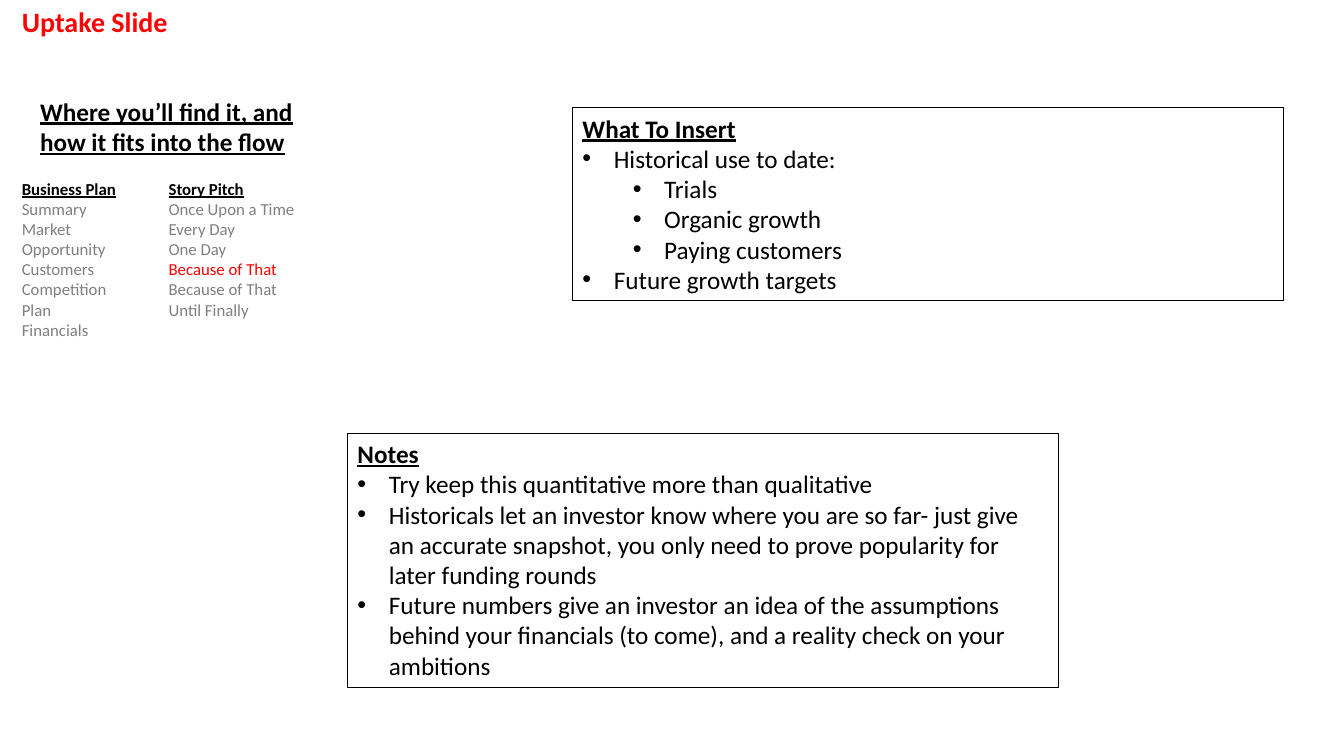
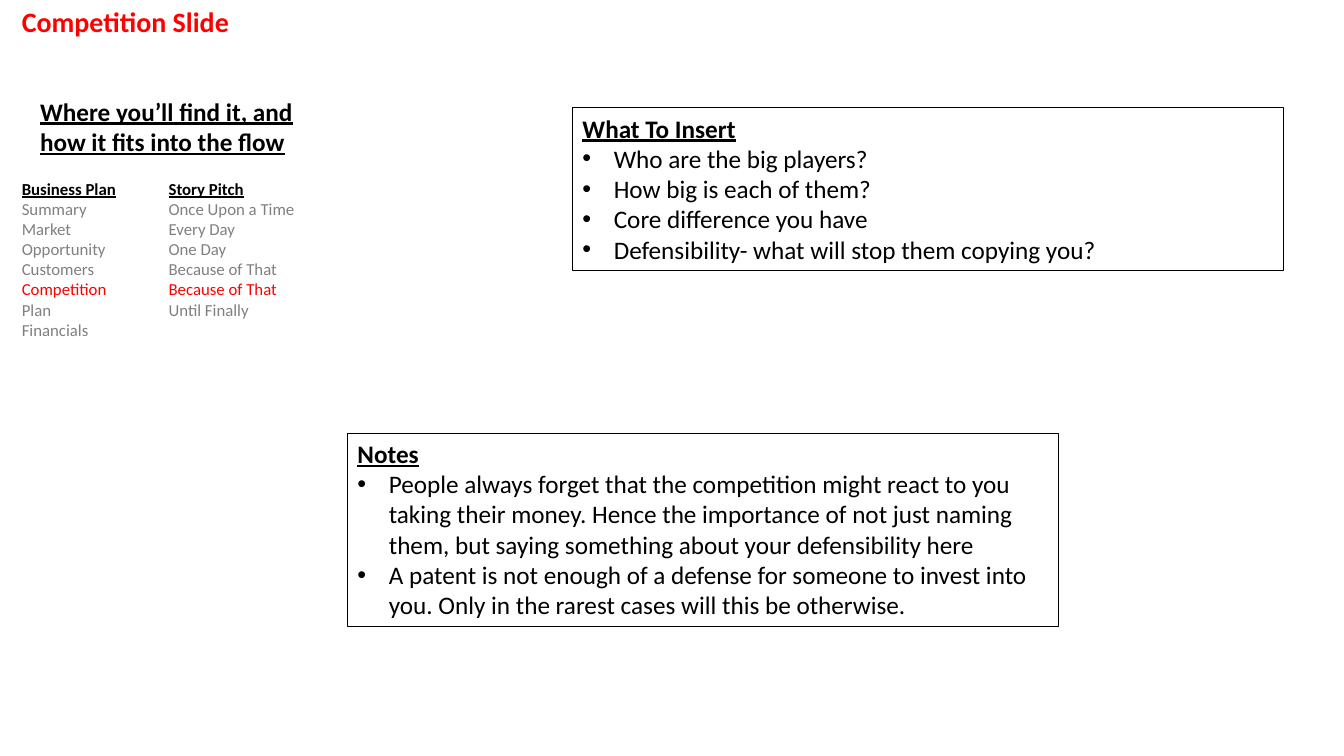
import pptx
import pptx.dml.color
import pptx.enum.shapes
import pptx.enum.text
import pptx.util
from lxml import etree
from pptx.oxml.ns import qn

Cm = pptx.util.Cm

# Shared style
FONT = "Calibri"
BLACK, RED, GREY = "000000", "FF0000", "808080"
TITLE_SIZE, BODY_SIZE, LIST_SIZE = 20, 18, 12
LINE_HEIGHT_PER_POINT = 0.0427  # cm
MARGINS = 0.25  # cm, top and bottom together
BULLET_INDENT, LEVEL_STEP = 0.79, 1.27  # cm

# Shared wording
FLOW_HEADING = "Where you’ll find it, and how it fits into the flow"
PLAN_STEPS = ["Summary", "Market", "Opportunity", "Customers",
              "Competition", "Plan", "Financials"]
PITCH_STEPS = ["Once Upon a Time", "Every Day", "One Day",
               "Because of That", "Because of That", "Until Finally"]

# What differs: highlighted steps are indexes, bullets are (level, text)
SLIDES = [
    {
        "title": "Uptake Slide",
        "plan_step": None,
        "pitch_step": 3,
        "insert": [
            (0, "Historical use to date:"),
            (1, "Trials"),
            (1, "Organic growth"),
            (1, "Paying customers"),
            (0, "Future growth targets"),
        ],
        "insert_lines": 6,
        "notes": [
            (0, "Try keep this quantitative more than qualitative"),
            (0, "Historicals let an investor know where you are so far- just give "
                "an accurate snapshot, you only need to prove popularity for "
                "later funding rounds"),
            (0, "Future numbers give an investor an idea of the assumptions "
                "behind your financials (to come), and a reality check on your "
                "ambitions"),
        ],
        "notes_lines": 8,
    },
    {
        "title": "Competition Slide",
        "plan_step": 4,
        "pitch_step": 4,
        "insert": [
            (0, "Who are the big players?"),
            (0, "How big is each of them?"),
            (0, "Core difference you have"),
            (0, "Defensibility- what will stop them copying you?"),
        ],
        "insert_lines": 5,
        "notes": [
            (0, "People always forget that the competition might react to you "
                "taking their money. Hence the importance of not just naming "
                "them, but saying something about your defensibility here"),
            (0, "A patent is not enough of a defense for someone to invest into "
                "you. Only in the rarest cases will this be otherwise."),
        ],
        "notes_lines": 6,
    },
]


def color(hex_value):
    return pptx.dml.color.RGBColor.from_string(hex_value)


def add_text(slide, left, top, width, lines, size, heading, items=(),
             heading_color=BLACK, underline=True, framed=False):
    """Add a bold heading followed by (text, color, bullet level) items."""
    height = MARGINS + LINE_HEIGHT_PER_POINT * size * lines
    bounds = Cm(left), Cm(top), Cm(width), Cm(height)
    if framed:
        shape = slide.shapes.add_shape(
            pptx.enum.shapes.MSO_SHAPE.RECTANGLE, *bounds)
        shape.shadow.inherit = False
        shape.fill.background()
        shape.line.color.rgb = color(BLACK)
        shape.line.width = pptx.util.Pt(0.75)
    else:
        shape = slide.shapes.add_textbox(*bounds)

    frame = shape.text_frame
    frame.word_wrap = True
    frame.auto_size = pptx.enum.text.MSO_AUTO_SIZE.SHAPE_TO_FIT_TEXT
    frame.vertical_anchor = pptx.enum.text.MSO_ANCHOR.TOP

    rows = [(heading, heading_color, None), *items]
    for index, (text, text_color, level) in enumerate(rows):
        paragraph = frame.add_paragraph() if index else frame.paragraphs[0]
        paragraph.text = text
        paragraph.alignment = pptx.enum.text.PP_ALIGN.LEFT
        paragraph.font.name = FONT
        paragraph.font.size = pptx.util.Pt(size)
        paragraph.font.color.rgb = color(text_color)
        paragraph.font.bold = index == 0
        paragraph.font.underline = index == 0 and underline
        if level is not None:
            paragraph.level = level
            properties = paragraph._p.get_or_add_pPr()
            properties.set("marL", str(Cm(BULLET_INDENT + LEVEL_STEP * level)))
            properties.set("indent", str(-Cm(BULLET_INDENT)))
            bullet_font = etree.Element(qn("a:buFont"), typeface="Arial")
            bullet = etree.Element(qn("a:buChar"), char="•")
            properties.insert(0, bullet_font)
            bullet_font.addnext(bullet)


presentation = pptx.Presentation()
presentation.slide_width = Cm(33.87)
presentation.slide_height = Cm(19.05)

for content in SLIDES:
    slide = presentation.slides.add_slide(presentation.slide_layouts[6])

    # Title
    add_text(slide, 0.3, 0, 7.37, 1, TITLE_SIZE, content["title"],
             heading_color=RED, underline=False)

    # Place in the flow, with the current step in red
    add_text(slide, 0.76, 2.29, 6.91, 2, BODY_SIZE, FLOW_HEADING)
    for left, width, heading, steps, current in [
        (0.3, 3.12, "Business Plan", PLAN_STEPS, content["plan_step"]),
        (4, 4.11, "Story Pitch", PITCH_STEPS, content["pitch_step"]),
    ]:
        items = [(step, RED if index == current else GREY, None)
                 for index, step in enumerate(steps)]
        add_text(slide, left, 4.37, width, len(steps) + 1, LIST_SIZE,
                 heading, items)

    # Framed boxes
    for left, top, heading, key in [
        (14.43, 2.72, "What To Insert", "insert"),
        (8.76, 10.92, "Notes", "notes"),
    ]:
        items = [(text, BLACK, level) for level, text in content[key]]
        add_text(slide, left, top, 17.91, content[key + "_lines"], BODY_SIZE,
                 heading, items, framed=True)

presentation.save("out.pptx")
